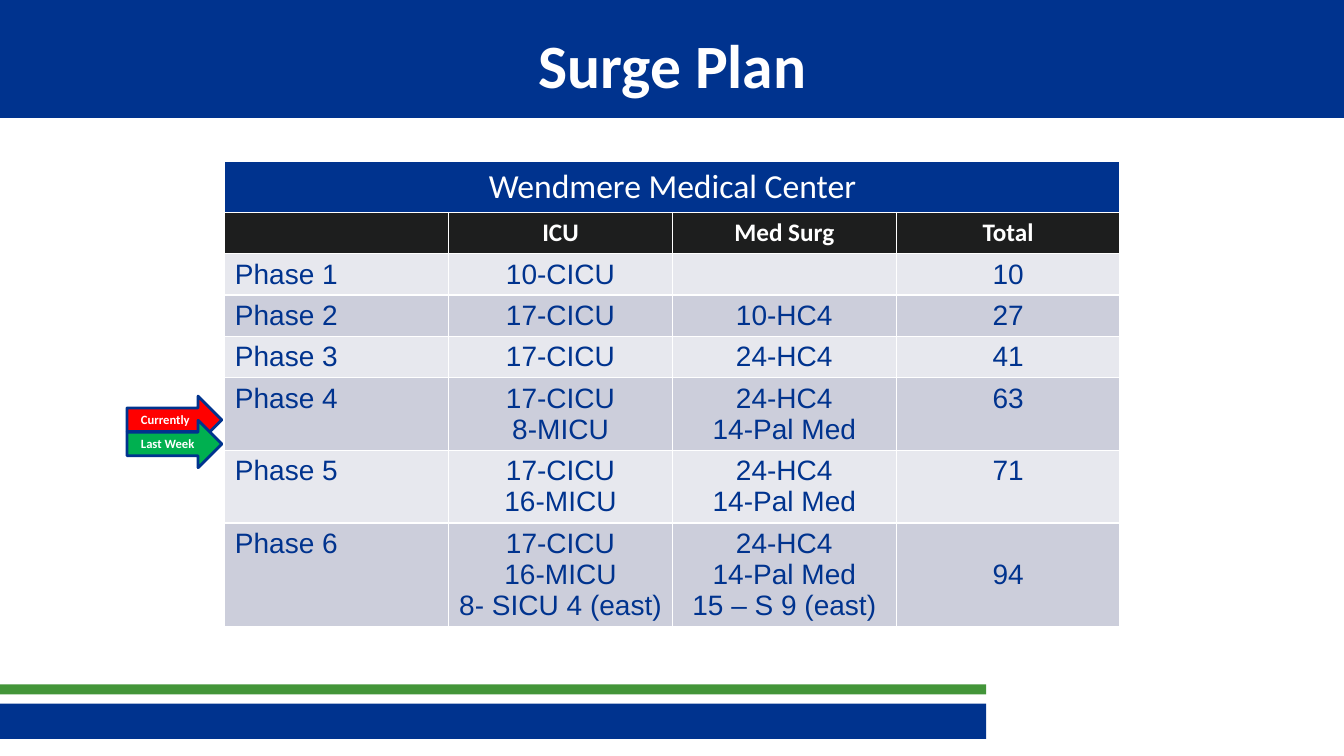
from lxml import etree
from pptx import Presentation
from pptx.dml.color import RGBColor
from pptx.enum.shapes import MSO_SHAPE
from pptx.enum.text import MSO_ANCHOR, MSO_AUTO_SIZE, PP_ALIGN
from pptx.oxml.ns import qn
from pptx.util import Inches, Pt

RECTANGLE, RIGHT_ARROW = MSO_SHAPE.RECTANGLE, MSO_SHAPE.RIGHT_ARROW
LEFT, CENTER = PP_ALIGN.LEFT, PP_ALIGN.CENTER
TOP, MIDDLE = MSO_ANCHOR.TOP, MSO_ANCHOR.MIDDLE
COLORS = {
    "blue": "00338E", "green": "439539", "black": "1D1E1E", "white": "FFFFFF",
    "light": "E7E8EE", "dark": "CCCEDB", "red": "FF0000", "arrow green": "00B050",
}
TITLE_FONT = {"name": "Calibri", "size": Pt(44), "bold": True}
CENTER_NAME_FONT = {"name": "Calibri", "size": Pt(24), "bold": False}
HEADER_FONT = {"name": "Calibri", "size": Pt(18), "bold": True}
BODY_FONT = {"name": "Arial", "size": Pt(20), "bold": False}
LABEL_FONT = {"name": "Calibri", "size": Pt(9), "bold": True}


def write(frame, text, font, color, align):
    """Fill a text frame, one paragraph for each line of text."""
    frame.text = text
    for para in frame.paragraphs:
        para.alignment = align
        for span in para.runs:
            for key, value in font.items():
                setattr(span.font, key, value)
            span.font.color.rgb = RGBColor.from_string(COLORS[color])


def add_filled(shapes, kind, place, color):
    shape = shapes.add_shape(kind, *map(Inches, place))
    shape.shadow.inherit = False
    shape.fill.solid()
    shape.fill.fore_color.rgb = RGBColor.from_string(COLORS[color])
    shape.line.fill.background()
    return shape


deck = Presentation()
deck.slide_width, deck.slide_height = Inches(13.33), Inches(7.5)
page = deck.slides.add_slide(deck.slide_layouts[5])

# Bars, with the title in front of them
bars = [
    ((-0.03, 6.98, 9.81, 0.35), "blue"),
    ((-0.03, 6.79, 9.81, 0.1), "green"),
    ((0, 0, 13.33, 1.17), "blue"),
]
for place, color in bars:
    add_filled(page.shapes, RECTANGLE, place, color)

title = page.shapes.title
title.left, title.top = Inches(0.67), Inches(0.17)
title.width, title.height = Inches(12), Inches(0.92)
title.text_frame.vertical_anchor = MIDDLE
write(title.text_frame, "Surge Plan", TITLE_FONT, "white", CENTER)
page.shapes.element.append(title.element)

# Surge table
rows = [
    ("Wendmere Medical Center", "", "", ""),
    ("", "ICU", "Med Surg", "Total"),
    ("Phase 1", "10-CICU", "", "10"),
    ("Phase 2", "17-CICU", "10-HC4", "27"),
    ("Phase 3", "17-CICU", "24-HC4", "41"),
    ("Phase 4", "17-CICU\n8-MICU", "24-HC4\n14-Pal Med", "63"),
    ("Phase 5", "17-CICU\n16-MICU", "24-HC4\n14-Pal Med", "71"),
    ("Phase 6", "17-CICU\n16-MICU\n8- SICU 4 (east)",
     "24-HC4\n14-Pal Med\n15 – S 9 (east)", "94"),
]
row_heights = [0.5, 0.41, 0.41, 0.41, 0.41, 0.72, 0.72, 1.03]
table = page.shapes.add_table(
    len(rows), 4, Inches(2.23), Inches(1.6), Inches(8.88), Inches(sum(row_heights))
).table
table.first_row = table.horz_banding = False
for column in table.columns:
    column.width = Inches(2.22)
for row, height in zip(table.rows, row_heights):
    row.height = Inches(height)
table.cell(0, 0).merge(table.cell(0, 3))

for r, texts in enumerate(rows):
    if r == 0:
        font, text_color, fill = CENTER_NAME_FONT, "white", "blue"
    elif r == 1:
        font, text_color, fill = HEADER_FONT, "white", "black"
    else:
        font, text_color = BODY_FONT, "blue"
        fill = "dark" if r % 2 else "light"
    for c, text in enumerate(texts):
        cell = table.cell(r, c)
        align = LEFT if r > 1 and c == 0 else CENTER
        if text:
            write(cell.text_frame, text, font, text_color, align)
        cell.vertical_anchor = MIDDLE if text == "94" else TOP
        properties = cell._tc.get_or_add_tcPr()
        for side in ("a:lnL", "a:lnR", "a:lnT", "a:lnB"):
            border = etree.SubElement(properties, qn(side), w=str(Pt(1)))
            paint = etree.SubElement(border, qn("a:solidFill"))
            etree.SubElement(paint, qn("a:srgbClr"), val=COLORS["white"])
        cell.fill.solid()
        cell.fill.fore_color.rgb = RGBColor.from_string(COLORS[fill])

# Arrows pointing at the phase of each week
markers = [("Currently", "red", 3.93, 0.69), ("Last Week", "arrow green", 4.17, 0.74)]
for text, color, top, label_width in markers:
    marker = page.shapes.add_group_shape()
    arrow = add_filled(marker.shapes, RIGHT_ARROW, (1.26, top, 0.94, 0.47), color)
    arrow.line.color.rgb = RGBColor.from_string(COLORS["blue"])
    arrow.line.width = Pt(2)
    label = marker.shapes.add_textbox(
        Inches(1.3), Inches(top + 0.11), Inches(label_width), Inches(0.25)
    )
    label.text_frame.word_wrap = False
    label.text_frame.auto_size = MSO_AUTO_SIZE.SHAPE_TO_FIT_TEXT
    write(label.text_frame, text, LABEL_FONT, "white", LEFT)

deck.save("out.pptx")
